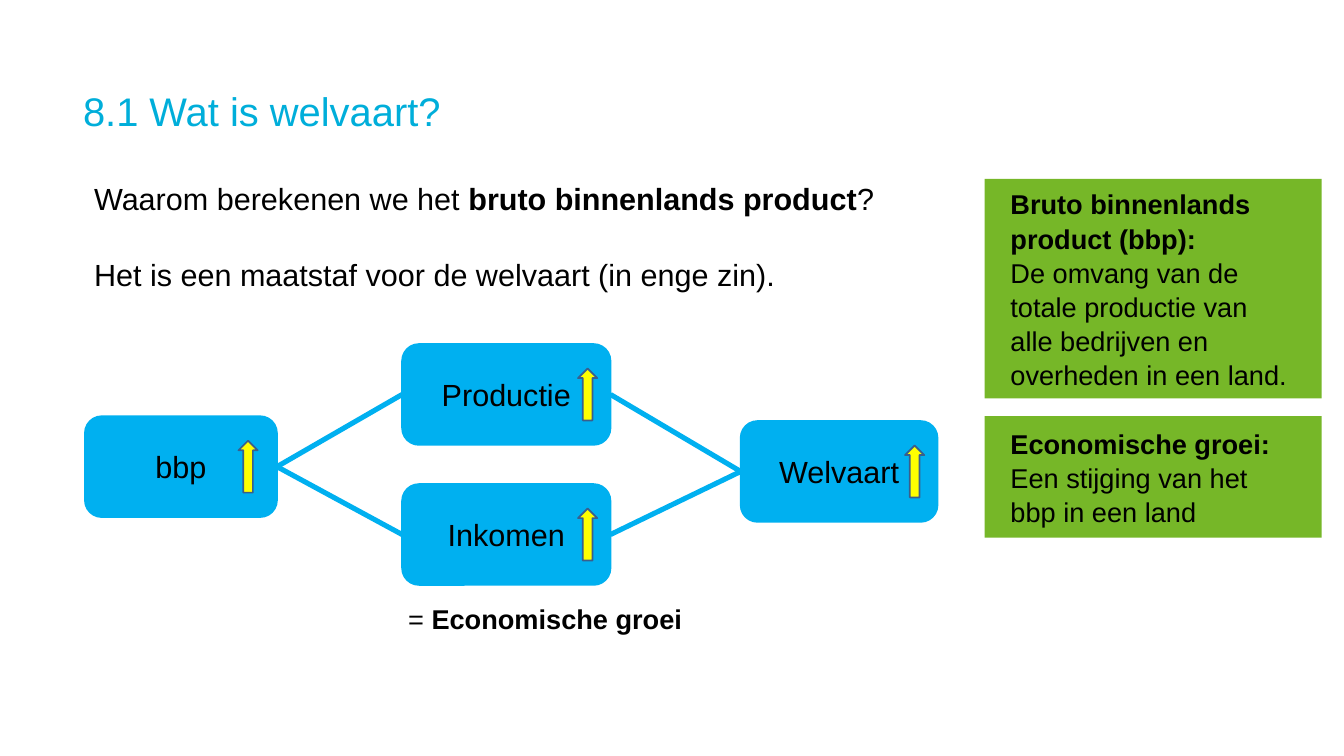
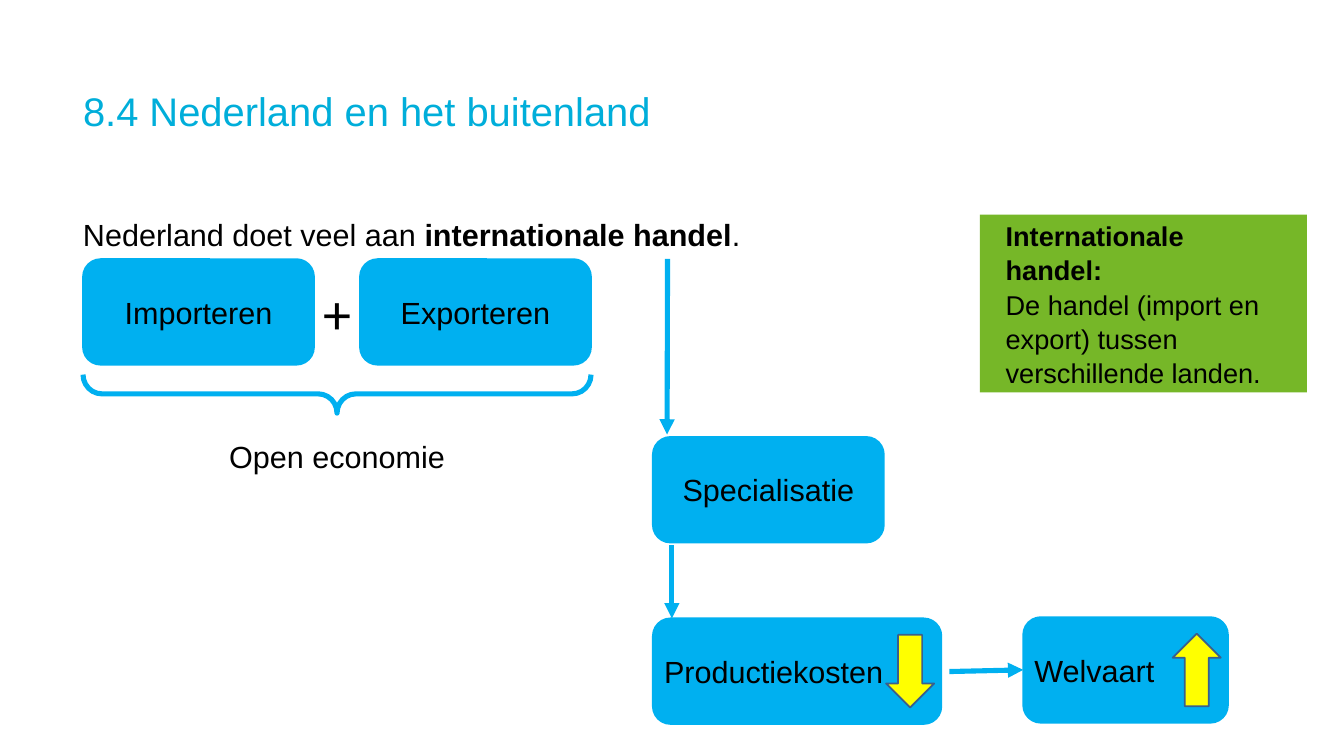
from lxml.etree import SubElement
from pptx import Presentation
from pptx.dml.color import RGBColor
from pptx.enum.shapes import MSO_CONNECTOR, MSO_SHAPE
from pptx.enum.text import MSO_ANCHOR, PP_ALIGN
from pptx.oxml.ns import qn
from pptx.util import Cm, Pt

CYAN = RGBColor(0x00, 0xAE, 0xDA)
BLUE = RGBColor(0x00, 0xB0, 0xF0)
GREEN = RGBColor(0x76, 0xB7, 0x28)
YELLOW = RGBColor(0xFF, 0xFF, 0x00)
STEEL = RGBColor(0x3A, 0x5F, 0x8C)
BLACK = RGBColor(0x00, 0x00, 0x00)

TITLE = (3.45, 3.45, 48.9, 2.31)
INSET = (0.25, 0.13)
SMALL = (0.8, 2.16, 0.55)  # width, height and right gap of a marker
LARGE = (2.0, 3.02, 0.3)
LEFT, RIGHT = 1, 3  # connection sites of a node


def write(shape, *lines, size=36, color=BLACK, font="Arial", align=PP_ALIGN.LEFT,
          anchor=MSO_ANCHOR.TOP, inset=INSET, spacing=1.0, gap=0):
    """Fill a shape with paragraphs; words between asterisks are bold."""
    frame = shape.text_frame
    frame.word_wrap = True
    frame.vertical_anchor = anchor
    frame.margin_left = frame.margin_right = Cm(inset[0])
    frame.margin_top = frame.margin_bottom = Cm(inset[1])
    for i, line in enumerate(lines):
        para = frame.add_paragraph() if i else frame.paragraphs[0]
        para.alignment = align
        para.line_spacing = spacing
        para.space_before = Pt(gap if i else 0)
        for j, part in enumerate(line.split("*")):
            if part:
                run = para.add_run()
                run.text = part
                run.font.name = font
                run.font.size = Pt(size)
                run.font.bold = j % 2 == 1
                run.font.color.rgb = color


def label(slide, box, *lines, **style):
    write(slide.shapes.add_textbox(*map(Cm, box)), *lines, **style)


def draw(slide, kind, box, fill=None, line=None, width=2):
    shape = slide.shapes.add_shape(kind, *map(Cm, box))
    shape.shadow.inherit = False
    for paint, color in ((shape.fill, fill), (shape.line.fill, line)):
        if color is None:
            paint.background()
        else:
            paint.solid()
            paint.fore_color.rgb = color
    if line is not None:
        shape.line.width = Pt(width)
    return shape


def node(slide, box, text, mark=None, kind=MSO_SHAPE.UP_ARROW, align=PP_ALIGN.CENTER):
    """Draw a blue block, with a yellow marker at its right if one is given."""
    shape = draw(slide, MSO_SHAPE.ROUNDED_RECTANGLE, box, BLUE, BLUE)
    write(shape, text, align=align, anchor=MSO_ANCHOR.MIDDLE)
    if mark:
        x, y, w, h = box
        wide, high, gap = mark
        spot = (x + w - gap - wide, y + (h - high) / 2, wide, high)
        draw(slide, kind, spot, YELLOW, STEEL)
    return shape


def link(slide, start, end, arrow=False):
    """Join two points, or the facing sides of two nodes."""
    glue = not isinstance(start, tuple)
    points = (0, 0, 0, 0) if glue else (*start, *end)
    line = slide.shapes.add_connector(MSO_CONNECTOR.STRAIGHT, *map(Cm, points))
    if glue:
        line.begin_connect(start, RIGHT)
        line.end_connect(end, LEFT)
    line.line.color.rgb = BLUE
    line.line.width = Pt(6)
    if arrow:
        SubElement(line.line._get_or_add_ln(), qn("a:tailEnd"), type="triangle")
    SubElement(line._element.spPr, qn("a:effectLst"))


def term(slide, box, name, text):
    """Draw a green block with a term and its meaning."""
    shape = draw(slide, MSO_SHAPE.RECTANGLE, box, GREEN)
    write(shape, f"*{name}*", text, size=32, anchor=MSO_ANCHOR.MIDDLE,
          inset=(1.07, 0), spacing=1.05)


def body(slide, box, *lines):
    label(slide, box, *lines, inset=(0, 0), spacing=1.05, gap=43.5)


def start(deck, text):
    """Add a slide with its title."""
    slide = deck.slides.add_slide(deck.slide_layouts[5])
    title = slide.shapes.title
    title.left, title.top, title.width, title.height = map(Cm, TITLE)
    write(title, text, size=47, color=CYAN, anchor=MSO_ANCHOR.MIDDLE, inset=(0, 0))
    return slide


def growth(slide, x, y):
    """Draw how gdp leads to welfare."""
    parts = (
        ("bbp", 0, 3, 7.98, 0.8),
        ("Productie", 13.18, 0, 8.66, 0.55),
        ("Inkomen", 13.18, 5.82, 8.66, 0.55),
        ("Welvaart", 27.25, 3.2, 8.18, 0.55),
    )
    first, *middle, last = [
        node(slide, (x + dx, y + dy, w, 4.19), text, (*SMALL[:2], gap))
        for text, dx, dy, w, gap in parts
    ]
    for block in middle:
        link(slide, first, block)
        link(slide, block, last)
    label(slide, (x + 13.18, y + 10.62, 14.07, 1.63), "= *Economische groei*", size=32)


def trade(slide, x, y, width):
    """Draw import plus export, braced together."""
    w, h, high = 9.6, 4.39, 1.6
    node(slide, (x, y, w, h), "Importeren")
    node(slide, (x + width - w, y, w, h), "Exporteren")
    label(slide, (x + w, y, width - 2 * w, h), "+", size=66, font="Calibri",
          align=PP_ALIGN.CENTER, anchor=MSO_ANCHOR.MIDDLE, inset=(0, 0))
    # The brace is turned a quarter, so its box is upright around the same centre
    box = (x + (width - high) / 2, y + 4.8 + (high - width) / 2, high, width)
    brace = draw(slide, MSO_SHAPE.RIGHT_BRACE, box, line=BLUE, width=6)
    brace.rotation = 90
    brace.adjustments[0] = 0.49
    brace.adjustments[1] = 0.5
    label(slide, (x, y + 7.29, width, 1.8), "Open economie", align=PP_ALIGN.CENTER)


def chain(slide, x, y):
    """Draw the steps from specialisation to welfare."""
    h = 4.39
    node(slide, (x, y, 9.6, h), "Specialisatie")
    node(slide, (x, y + 7.54, 11.99, h), "Productiekosten", LARGE,
         MSO_SHAPE.DOWN_ARROW, PP_ALIGN.LEFT)
    node(slide, (x + 15.39, y + 7.49, 8.51, h), "Welvaart", LARGE, align=PP_ALIGN.LEFT)
    for x1, y1, x2, y2 in (
        (0.61, -7.4, 0.59, -0.1),
        (0.79, 4.5, 0.79, 7.54),
        (12.32, 9.75, 15.39, 9.68),
    ):
        link(slide, (x + x1, y + y1), (x + x2, y + y2), arrow=True)


def welfare(deck):
    slide = start(deck, "8.1 Wat is welvaart?")
    body(slide, (3.91, 7.42, 35, 6.1),
         "Waarom berekenen we het *bruto binnenlands product*?",
         "Het is een maatstaf voor de welvaart (in enge zin).")
    growth(slide, 3.53, 14.3)
    term(slide, (40.92, 7.44, 14, 9.12), "Bruto binnenlands product (bbp):",
         "De omvang van de totale productie van alle bedrijven en overheden in een land.")
    term(slide, (40.92, 17.3, 14, 5.05), "Economische groei:",
         "Een stijging van het bbp in een land")


def abroad(deck):
    slide = start(deck, "8.4 Nederland en het buitenland")
    body(slide, (3.45, 8.92, 35.26, 1.8),
         "Nederland doet veel aan *internationale handel*.")
    trade(slide, 3.45, 10.77, 21.11)
    chain(slide, 27.13, 18.16)
    term(slide, (40.72, 8.92, 13.59, 7.39), "Internationale handel:",
         "De handel (import en export) tussen verschillende landen.")


def main():
    deck = Presentation()
    deck.slide_width, deck.slide_height = Cm(55.85), Cm(31.42)
    welfare(deck)
    abroad(deck)
    deck.save("out.pptx")


if __name__ == "__main__":
    main()
